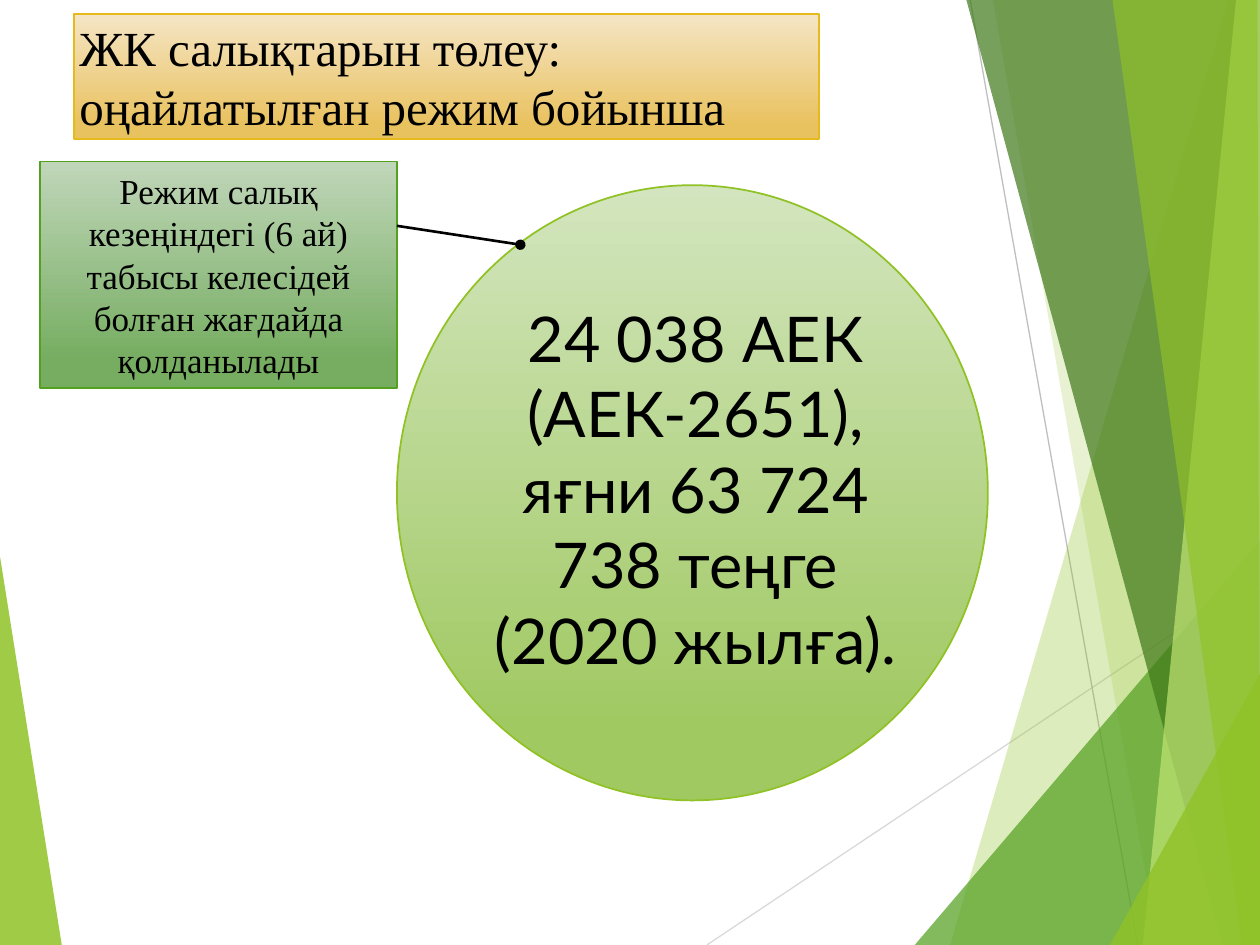
"""Build a slide on the simplified tax regime, set on green facets."""
from lxml.etree import SubElement
from pptx import Presentation
from pptx.dml.color import RGBColor
from pptx.enum.shapes import MSO_CONNECTOR, MSO_SHAPE
from pptx.enum.text import MSO_ANCHOR, PP_ALIGN
from pptx.oxml.ns import qn
from pptx.util import Inches, Pt

THEME = {
    "lime": "90C226", "green": "54A021", "dark": "3F7819", "pale": "C0E474",
    "gold": "E6B91E", "ink": "000000", "mist": "D9D9D9", "grey": "BFBFBF",
    "fade": {"lime": ("D3E5BE", "A0C962"), "green": ("C0D6B9", "76AD61"),
             "gold": ("F5E5C5", "E9C260")},
    "serif": "Times New Roman", "sans": "Lato",
    "title": 28, "note": 20, "sum": 36,
}
WIDE, HIGH = Inches(10), Inches(7.5)

TITLE = "ЖК салықтарын төлеу: оңайлатылған режим бойынша"
NOTE = "Режим салық кезеңіндегі (6 ай) табысы келесідей болған жағдайда қолданылады"
SUM = "24 038 АЕК (АЕК-2651), яғни 63 724 738 теңге (2020 жылға)."

RAYS = [((56.1, 100), (100, 60.9), "mist"), ((77, 0), (90.3, 100), "grey")]
FACETS = [
    ("lime", 85, [(0, 58.9), (4.9, 100), (0, 100)]),
    ("lime", 30, [(97.5, 0), (75.4, 100), (100, 100), (100, 0)]),
    ("lime", 20, [(78.8, 0), (91.9, 100), (100, 100), (100, 0)]),
    ("green", 72, [(72.6, 100), (100, 57.2), (100, 100)]),
    ("dark", 70, [(76.7, 0), (97, 100), (100, 100), (100, 0)]),
    ("pale", 70, [(98.1, 0), (90.7, 100), (100, 100), (100, 0)]),
    ("lime", 65, [(88.3, 0), (98.6, 100), (100, 100), (99.8, 0)]),
    ("lime", 80, [(88.1, 100), (100, 71.3), (100, 100)]),
]
CIRCLE = (31.5, 19.6, 46.9, 65.1)
CORE = (36.6, 31.2, 37.2, 40.9)
CARD = (3.2, 17.1, 28.3, 24)
HEAD = (5.9, 1.5, 59.1, 13.2)
LINK = ((31.5, 23.9), (41.3, 25.9))


def paint(name):
    return RGBColor.from_string(THEME.get(name, name))


def place(x, y):
    return round(WIDE * x / 100), round(HIGH * y / 100)


def frame(box):
    return place(*box[:2]) + place(*box[2:])


def draw_line(slide, start, end, color, width):
    line = slide.shapes.add_connector(MSO_CONNECTOR.STRAIGHT, *place(*start), *place(*end))
    line.line.color.rgb = paint(color)
    line.line.width = Pt(width)
    SubElement(line._element.spPr, qn("a:effectLst"))
    return line


def draw_facet(slide, color, alpha, points):
    first, *rest = [place(*point) for point in points]
    pen = slide.shapes.build_freeform(*first, scale=1.0)
    pen.add_line_segments(rest, close=True)
    shape = pen.convert_to_shape()
    shape.shadow.inherit = False
    shape.fill.solid()
    shape.fill.fore_color.rgb = paint(color)
    tint = shape._element.spPr.find(".//" + qn("a:srgbClr"))
    SubElement(tint, qn("a:alpha"), val=str(alpha * 1000))
    shape.line.fill.background()


def draw_panel(slide, kind, box, color):
    shape = slide.shapes.add_shape(kind, *frame(box))
    shape.shadow.inherit = False
    shape.fill.gradient()
    shape.fill.gradient_angle = 270
    for stop, tint, spot in zip(shape.fill.gradient_stops, THEME["fade"][color], (0, 0.88)):
        stop.color.rgb = paint(tint)
        stop.position = spot
    shape.line.color.rgb = paint(color)
    shape.line.width = Pt(1)
    return shape


def write(shape, text, size, face, align, pad):
    area = shape.text_frame
    area.word_wrap = True
    area.vertical_anchor = MSO_ANCHOR.MIDDLE
    area.margin_left = area.margin_right = Inches(pad)
    area.margin_top = area.margin_bottom = Inches(pad / 2)
    para = area.paragraphs[0]
    para.text = text
    para.alignment = align
    para.font.size = Pt(THEME[size])
    para.font.name = THEME[face]
    para.font.color.rgb = paint("ink")


def main():
    deck = Presentation()
    deck.slide_width, deck.slide_height = WIDE, HIGH
    slide = deck.slides.add_slide(deck.slide_layouts[6])
    for start, end, color in RAYS:
        draw_line(slide, start, end, color, 0.75)
    for facet in FACETS:
        draw_facet(slide, *facet)

    draw_panel(slide, MSO_SHAPE.OVAL, CIRCLE, "lime")
    core = slide.shapes.add_textbox(*frame(CORE))
    write(core, SUM, "sum", "sans", PP_ALIGN.CENTER, 0.04)
    card = draw_panel(slide, MSO_SHAPE.RECTANGLE, CARD, "green")
    write(card, NOTE, "note", "serif", PP_ALIGN.CENTER, 0.11)
    link = draw_line(slide, *LINK, "ink", 1.5)
    SubElement(link.line._get_or_add_ln(), qn("a:tailEnd"), type="oval")
    head = draw_panel(slide, MSO_SHAPE.RECTANGLE, HEAD, "gold")
    write(head, TITLE, "title", "serif", PP_ALIGN.LEFT, 0.04)
    deck.save("out.pptx")


if __name__ == "__main__":
    main()
